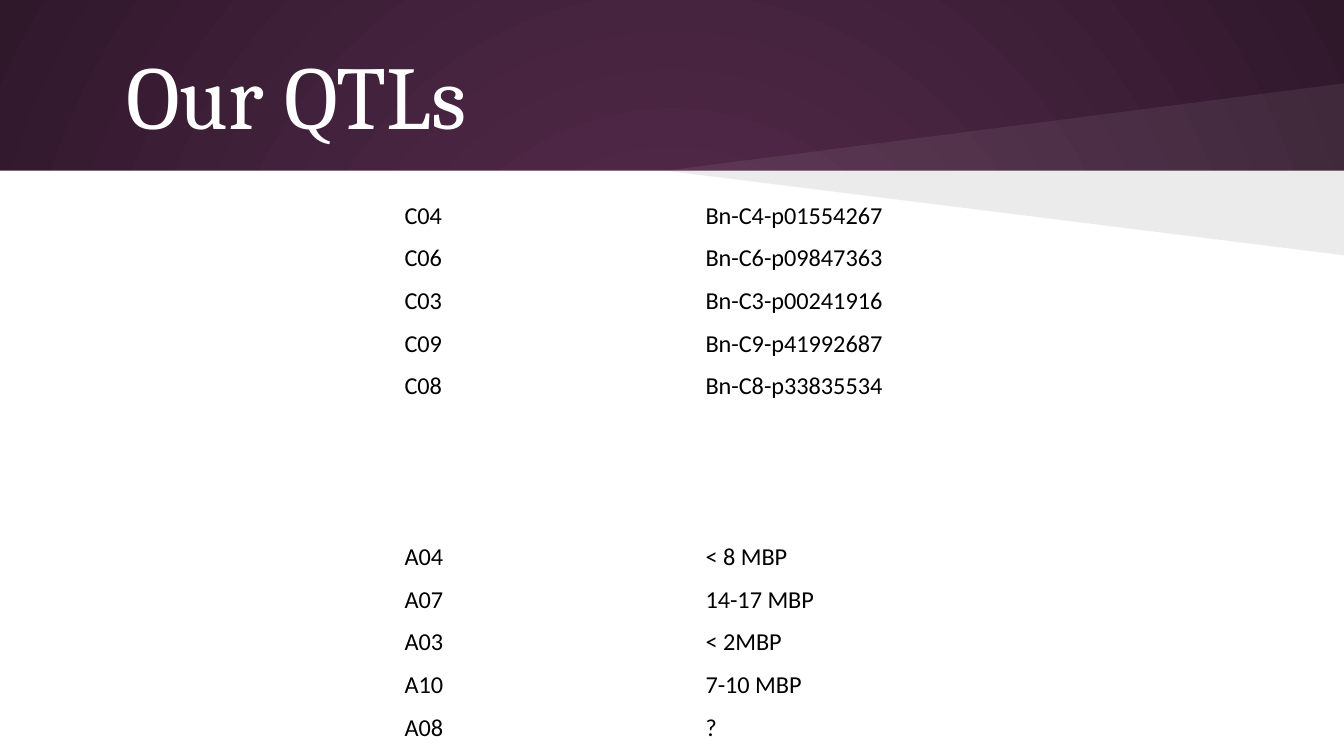
from typing import NamedTuple

from lxml import etree
from pptx import Presentation
from pptx.dml import color
from pptx.enum import shapes, text
from pptx.oxml import ns
from pptx.util import Inches, Pt

SLIDE_WIDTH = Inches(10)
SLIDE_HEIGHT = SLIDE_WIDTH * 9 // 16
BAND_BOTTOM = Inches(1.27)
WEDGE_TIP = Inches(4.95)
NO_GRID_STYLE = "{2D5ABB26-0587-4C30-8999-92F81FD0307C}"


class Wedge(NamedTuple):
    outer_y: float
    fill: str
    opacity: int


class Locus(NamedTuple):
    chromosome: str = ""
    position: str = ""


WEDGES = [Wedge(0.62, "FFFFFF", 7), Wedge(1.9, "000000", 8)]
LOCI = [
    Locus("C04", "Bn-C4-p01554267"),
    Locus("C06", "Bn-C6-p09847363"),
    Locus("C03", "Bn-C3-p00241916"),
    Locus("C09", "Bn-C9-p41992687"),
    Locus("C08", "Bn-C8-p33835534"),
    *[Locus()] * 3,
    Locus("A04", "< 8 MBP"),
    Locus("A07", "14-17 MBP"),
    Locus("A03", "< 2MBP"),
    Locus("A10", "7-10 MBP"),
    Locus("A08", "?"),
]


def rgb(value: str) -> color.RGBColor:
    return color.RGBColor.from_string(value)


def style_font(font, name: str, size: float, fill: str) -> None:
    font.name, font.size = name, Pt(size)
    font.color.rgb = rgb(fill)


def paint_background(slide) -> None:
    fill = slide.background.fill
    fill.gradient()
    for stop, shade in zip(fill.gradient_stops, ("592D50", "30182B")):
        stop.color.rgb = rgb(shade)
    linear = slide.element.find(".//" + ns.qn("a:lin"))
    radial = etree.Element(ns.qn("a:path"), path="circle")
    etree.SubElement(radial, ns.qn("a:fillToRect"),
                     {side: "50000" for side in "ltrb"})
    linear.getparent().replace(linear, radial)


def paint_shape(shape, fill: str) -> None:
    shape.shadow.inherit = False
    shape.fill.solid()
    shape.fill.fore_color.rgb = rgb(fill)
    shape.line.fill.background()


def add_wedge(slide, wedge: Wedge) -> None:
    builder = slide.shapes.build_freeform(SLIDE_WIDTH, BAND_BOTTOM)
    builder.add_line_segments(
        [(WEDGE_TIP, BAND_BOTTOM), (SLIDE_WIDTH, Inches(wedge.outer_y))])
    shape = builder.convert_to_shape()
    paint_shape(shape, wedge.fill)
    tint = shape.element.spPr.find(".//" + ns.qn("a:srgbClr"))
    etree.SubElement(tint, ns.qn("a:alpha"), val=str(wedge.opacity * 1000))


def add_title(slide, wording: str) -> None:
    frame = slide.shapes.add_textbox(
        Inches(0.5), Inches(0.23), Inches(9), Inches(0.94)).text_frame
    frame.word_wrap = True
    frame.vertical_anchor = text.MSO_ANCHOR.MIDDLE
    frame.margin_left = Inches(0.44)
    frame.margin_right = frame.margin_top = frame.margin_bottom = Inches(0.1)
    frame.text = wording
    style_font(frame.paragraphs[0].font, "Cambria", 48, "FFFFFF")


def fill_cell(cell, wording: str) -> None:
    cell.fill.background()
    cell.vertical_anchor = text.MSO_ANCHOR.BOTTOM
    cell.margin_left = cell.margin_right = cell.margin_top = Inches(0.01)
    cell.margin_bottom = 0
    cell.text = wording
    style_font(cell.text_frame.paragraphs[0].font, "Calibri", 13, "000000")


def add_loci(slide, loci: list[Locus]) -> None:
    table = slide.shapes.add_table(
        len(loci), 2, Inches(3), Inches(1.4), Inches(4.67), Inches(4.13)).table
    table.first_row = table.horz_banding = False
    table._tbl.tblPr.find(ns.qn("a:tableStyleId")).text = NO_GRID_STYLE
    for column, width in zip(table.columns, (2.24, 2.43)):
        column.width = Inches(width)
    for row, locus in zip(table.rows, loci):
        for cell, wording in zip(row.cells, locus):
            fill_cell(cell, wording)


def main() -> None:
    """Build the slide listing the QTLs by chromosome and position."""
    deck = Presentation()
    deck.slide_width, deck.slide_height = SLIDE_WIDTH, SLIDE_HEIGHT
    slide = deck.slides.add_slide(deck.slide_layouts[6])
    paint_background(slide)
    panel = slide.shapes.add_shape(
        shapes.MSO_SHAPE.RECTANGLE,
        0, BAND_BOTTOM, SLIDE_WIDTH, SLIDE_HEIGHT - BAND_BOTTOM)
    paint_shape(panel, "FFFFFF")
    for wedge in WEDGES:
        add_wedge(slide, wedge)
    add_title(slide, "Our QTLs")
    add_loci(slide, LOCI)
    deck.save("out.pptx")


if __name__ == "__main__":
    main()
